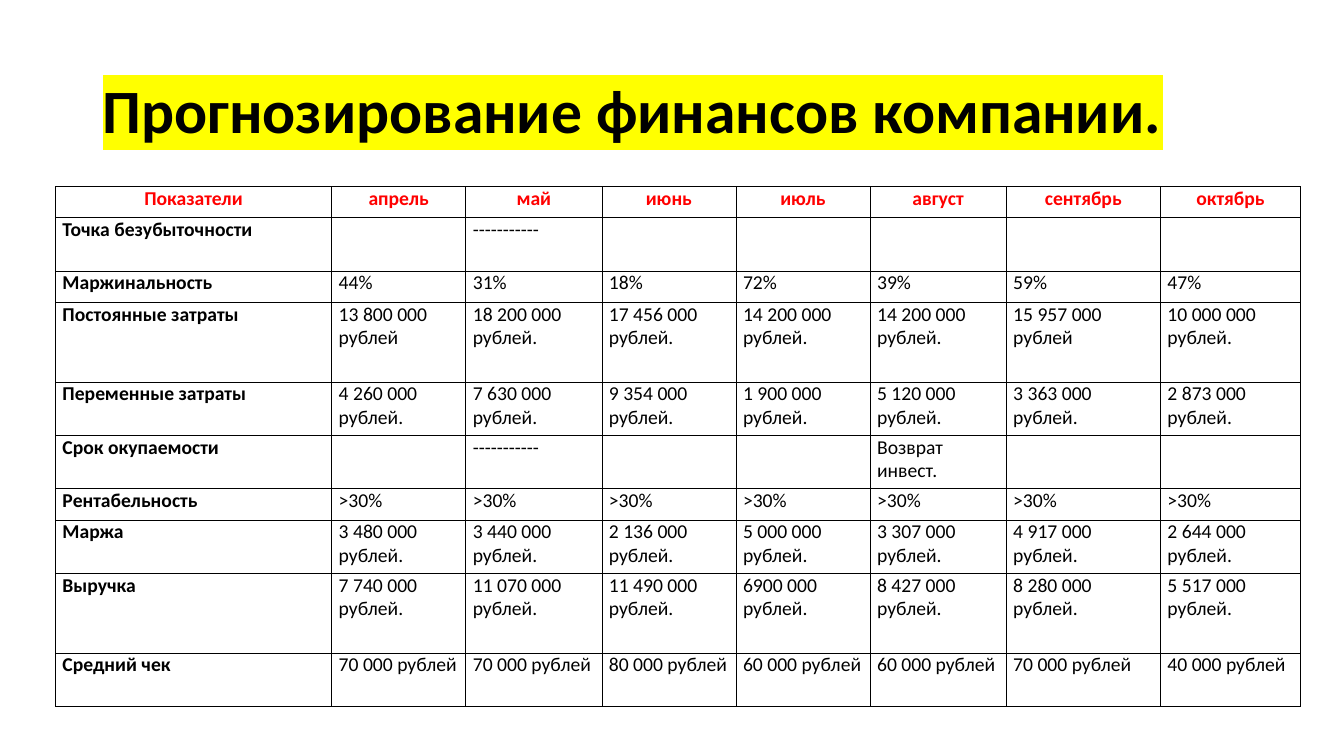
"""Build a slide with a month-by-month forecast table of company finances."""
import pptx
import pptx.dml.color
import pptx.enum.text
import pptx.oxml
import pptx.oxml.ns
import pptx.util
from pptx.util import Inches

BLACK = pptx.dml.color.RGBColor(0x00, 0x00, 0x00)
RED = pptx.dml.color.RGBColor(0xFF, 0x00, 0x00)
YELLOW = pptx.dml.color.RGBColor(0xFF, 0xFF, 0x00)
NAMESPACE = pptx.oxml.ns.nsdecls("a")

COLUMN_WIDTHS = [2.74, 1.33, 1.35, 1.33, 1.33, 1.35, 1.53, 1.39]
FORECAST = [
    (0.31, ["Показатели", "апрель", "май", "июнь", "июль", "август", "сентябрь", "октябрь"]),
    (0.53, ["Точка безубыточности", "", "-----------", "", "", "", "", ""]),
    (0.31, ["Маржинальность", "44%", "31%", "18%", "72%", "39%", "59%", "47%"]),
    (0.79, ["Постоянные затраты", "13 800 000 рублей", "18 200 000 рублей.",
            "17 456 000 рублей.", "14 200 000 рублей.", "14 200 000 рублей.",
            "15 957 000 рублей", "10 000 000 рублей."]),
    (0.53, ["Переменные затраты", "4 260 000 рублей.", "7 630 000 рублей.",
            "9 354 000 рублей.", "1 900 000 рублей.", "5 120 000 рублей.",
            "3 363 000 рублей.", "2 873 000 рублей."]),
    (0.53, ["Срок окупаемости", "", "-----------", "", "", "Возврат инвест.", "", ""]),
    (0.31, ["Рентабельность"] + [">30%"] * 7),
    (0.53, ["Маржа", "3 480 000 рублей.", "3 440 000 рублей.", "2 136 000 рублей.",
            "5 000 000 рублей.", "3 307 000 рублей.", "4 917 000 рублей.",
            "2 644 000 рублей."]),
    (0.79, ["Выручка", "7 740 000 рублей.", "11 070 000 рублей.", "11 490 000 рублей.",
            "6900 000 рублей.", "8 427 000 рублей.", "8 280 000 рублей.",
            "5 517 000 рублей."]),
    (0.53, ["Средний чек", "70 000 рублей", "70 000 рублей", "80 000 рублей",
            "60 000 рублей", "60 000 рублей", "70 000 рублей", "40 000 рублей"]),
]


def style_paragraph(paragraph, size, color, bold):
    paragraph.font.name = "Calibri"
    paragraph.font.size = pptx.util.Pt(size)
    paragraph.font.color.rgb = color
    paragraph.font.bold = bold


def add_borders(cell):
    properties = cell._tc.get_or_add_tcPr()
    for side in ("lnL", "lnR", "lnT", "lnB"):
        properties.append(pptx.oxml.parse_xml(
            f'<a:{side} {NAMESPACE} w="{pptx.util.Pt(0.5)}"><a:solidFill>'
            f'<a:srgbClr val="{BLACK}"/></a:solidFill></a:{side}>'))


presentation = pptx.Presentation()
presentation.slide_width = Inches(13.33)
presentation.slide_height = Inches(7.5)
slide = presentation.slides.add_slide(presentation.slide_layouts[6])

title = slide.shapes.add_textbox(Inches(0.92), Inches(0.4), Inches(11.5), Inches(1.45)).text_frame
title.word_wrap = True
title.vertical_anchor = pptx.enum.text.MSO_ANCHOR.MIDDLE
heading = title.paragraphs[0]
heading.line_spacing = 0.9
style_paragraph(heading, 44, BLACK, True)
heading_run = heading.add_run()
heading_run.text = "Прогнозирование финансов компании."
heading_run._r.get_or_add_rPr().append(pptx.oxml.parse_xml(
    f'<a:highlight {NAMESPACE}><a:srgbClr val="{YELLOW}"/></a:highlight>'))

forecast_table = slide.shapes.add_table(
    len(FORECAST), len(COLUMN_WIDTHS),
    Inches(0.55), Inches(1.85), Inches(12.33), Inches(5.14)).table
forecast_table.first_row = False
forecast_table.horz_banding = False
for column, width in zip(forecast_table.columns, COLUMN_WIDTHS):
    column.width = Inches(width)

for row_index, (height, values) in enumerate(FORECAST):
    forecast_table.rows[row_index].height = Inches(height)
    is_header = row_index == 0
    for column_index, value in enumerate(values):
        cell = forecast_table.cell(row_index, column_index)
        cell.text = value
        cell.margin_left = cell.margin_right = Inches(0.07)
        cell.margin_top = cell.margin_bottom = 0
        add_borders(cell)
        cell.fill.background()
        paragraph = cell.text_frame.paragraphs[0]
        style_paragraph(paragraph, 14, RED if is_header else BLACK,
                        is_header or column_index == 0)
        if is_header:
            paragraph.alignment = pptx.enum.text.PP_ALIGN.CENTER

presentation.save("out.pptx")
